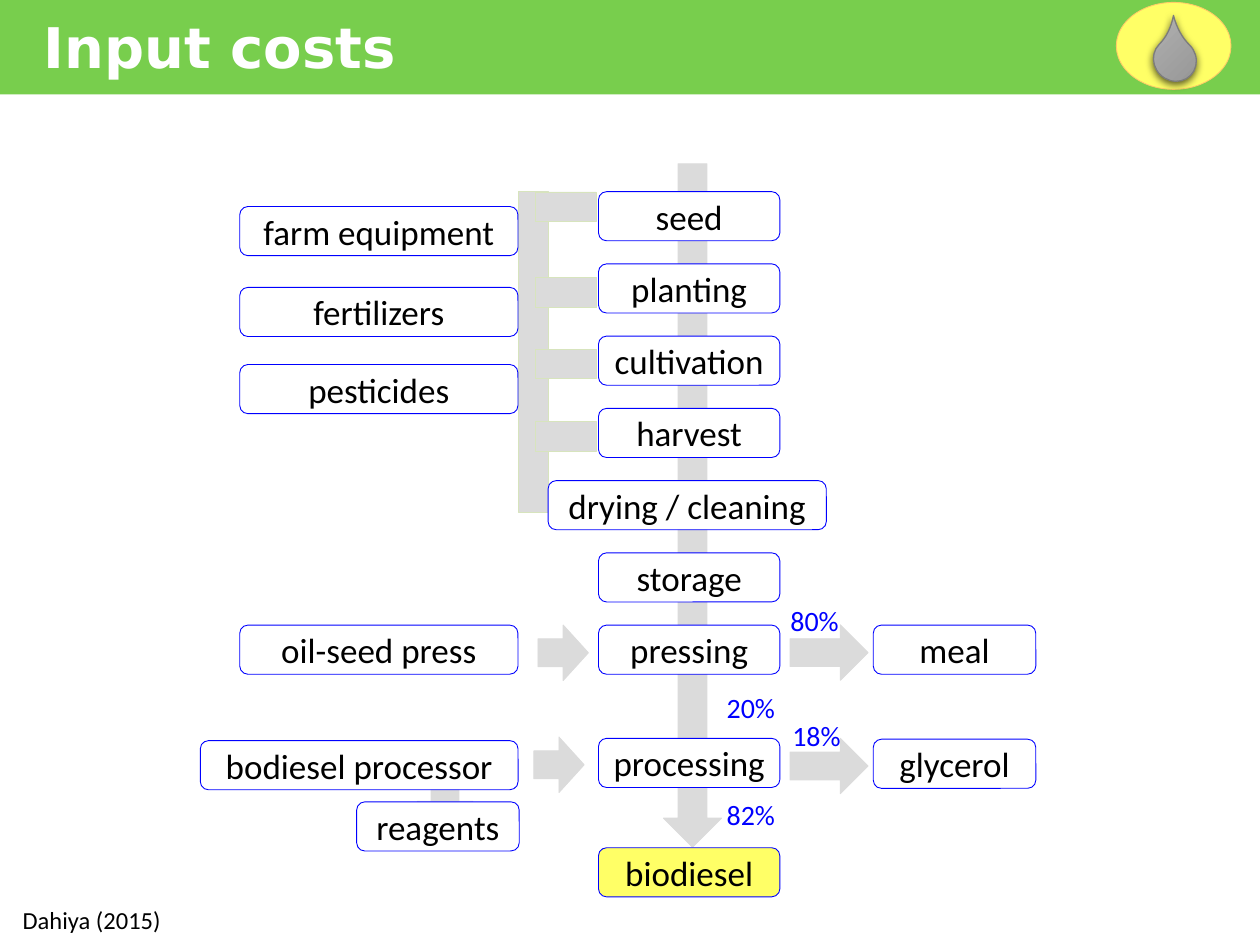
"""Build the slide on the input costs of biodiesel production."""
from lxml import etree
from pptx import Presentation
from pptx import util as u
from pptx.dml.color import RGBColor
from pptx.enum import shapes, text
from pptx.oxml import ns

GREEN = RGBColor(0x78, 0xCE, 0x4D)
YELLOW = RGBColor(0xFF, 0xFF, 0x66)
ORANGE = RGBColor(0xFF, 0xCC, 0x66)
GREY = RGBColor(0xDB, 0xDB, 0xDB)
PALE_GREEN = RGBColor(0xD7, 0xE4, 0xBD)
DROP_LIGHT = RGBColor(0xAF, 0xAF, 0xAF)
DROP_DARK = RGBColor(0x93, 0x93, 0x93)
DROP_EDGE = RGBColor(0x7C, 0x7C, 0x7C)
BLUE = RGBColor(0x00, 0x00, 0xFF)
BLACK = RGBColor(0x00, 0x00, 0x00)
WHITE = RGBColor(0xFF, 0xFF, 0xFF)

KIND = shapes.MSO_SHAPE
BOX_HEIGHT = 28.1
STAGE_LEFT, STAGE_WIDTH = 342, 103.7
STAGE_TOP, STAGE_STEP = 109.5, 41.28
INPUT_LEFT, INPUT_WIDTH = 137, 159
OUTPUT_LEFT, OUTPUT_WIDTH = 499, 92.9


class FlowSlide:
    """Hold the style and the slide, and add each kind of element."""

    def __init__(self, slide, font="Calibri"):
        self.slide = slide
        self.font = font

    def shape(self, kind, left, top, width, height, fill=None, line=None,
              rotation=0, parent=None):
        parent = parent or self.slide
        shape = parent.shapes.add_shape(
            kind, u.Pt(left), u.Pt(top), u.Pt(width), u.Pt(height))
        shape.shadow.inherit = False
        shape.rotation = rotation
        if fill is None:
            shape.fill.background()
        else:
            shape.fill.solid()
            shape.fill.fore_color.rgb = fill
        if line is None:
            shape.line.fill.background()
        else:
            shape.line.color.rgb = line
            shape.line.width = u.Pt(0.5)
        return shape

    def text_run(self, paragraph, words, size, color, font=None, bold=False):
        run = paragraph.add_run()
        run.text = words
        run.font.name = font or self.font
        run.font.size = u.Pt(size)
        run.font.bold = bold
        run.font.color.rgb = color

    def box(self, words, left, top, width, fill=None):
        shape = self.shape(KIND.ROUNDED_RECTANGLE, left, top, width,
                           BOX_HEIGHT, fill, BLUE)
        frame = shape.text_frame
        frame.vertical_anchor = text.MSO_ANCHOR.MIDDLE
        paragraph = frame.paragraphs[0]
        paragraph.alignment = text.PP_ALIGN.CENTER
        self.text_run(paragraph, words, 20, BLACK)

    def label(self, words, left, top, width, height, size, color,
              font=None, bold=False):
        shape = self.slide.shapes.add_textbox(
            u.Pt(left), u.Pt(top), u.Pt(width), u.Pt(height))
        frame = shape.text_frame
        frame.word_wrap = False
        frame.auto_size = text.MSO_AUTO_SIZE.SHAPE_TO_FIT_TEXT
        self.text_run(frame.paragraphs[0], words, size, color, font, bold)

    def arrow(self, left, top, width, height, rotation=0):
        self.shape(KIND.DOWN_ARROW, left, top, width, height, GREY, GREY,
                   rotation)

    def bar(self, left, top, width, height, rotation=0):
        self.shape(KIND.RECTANGLE, left, top, width, height, GREY,
                   PALE_GREEN, rotation)

    def drop_icon(self):
        group = self.slide.shapes.add_group_shape()
        self.shape(KIND.OVAL, 637.9, 1.4, 65.5, 49.7, YELLOW, ORANGE,
                   parent=group)
        drop = self.shape(KIND.TEAR, 659.5, 21.6, 23.8, 25.2, GREY,
                          DROP_EDGE, 314.8, group)
        drop.adjustments[0] = 1.465
        drop.line.width = u.Pt(0.75)
        drop.fill.gradient()
        drop.fill.gradient_angle = 270
        for stop, color in zip(drop.fill.gradient_stops,
                               (DROP_LIGHT, DROP_DARK)):
            stop.color.rgb = color
        effects = drop.element.spPr.find(ns.qn("a:effectLst"))
        shadow = etree.SubElement(
            effects, ns.qn("a:outerShdw"), blurRad=str(u.Pt(4.5)),
            dist=str(u.Pt(1.5)), dir="5400000", rotWithShape="0")
        color = etree.SubElement(shadow, ns.qn("a:srgbClr"), val="000000")
        etree.SubElement(color, ns.qn("a:alpha"), val="63000")


def main():
    presentation = Presentation()
    presentation.slide_width = u.Pt(720)
    presentation.slide_height = u.Pt(540)
    flow = FlowSlide(
        presentation.slides.add_slide(presentation.slide_layouts[6]))

    flow.bar(296.5, 109.5, 16.8, 183.6)
    flow.arrow(238.5, 443.5, 31.7, 28.8)
    flow.arrow(379.2, 93.6, 33.1, 390.5)

    flow.shape(KIND.RECTANGLE, 0, 0, 720.5, 54, GREEN)
    flow.label("Input costs", 18, 3.6, 221, 46, 32, WHITE,
               "DejaVu Sans", True)
    flow.drop_icon()
    flow.label("Dahiya (2015)", 5.8, 513.4, 94.3, 24.2, 14, BLACK)

    stages = ("seed", "planting", "cultivation", "harvest",
              "drying / cleaning", "storage", "pressing")
    for index, words in enumerate(stages):
        left, width = STAGE_LEFT, STAGE_WIDTH
        if words == "drying / cleaning":
            left, width = 313.2, INPUT_WIDTH
        flow.box(words, left, STAGE_TOP + index * STAGE_STEP, width, WHITE)
    flow.box("processing", STAGE_LEFT, 421.9, STAGE_WIDTH, WHITE)
    flow.box("biodiesel", STAGE_LEFT, 484.4, STAGE_WIDTH, YELLOW)

    for words, top in (("farm equipment", 118), ("fertilizers", 164.2),
                       ("pesticides", 208.3), ("oil-seed press", 357.2)):
        flow.box(words, INPUT_LEFT, top, INPUT_WIDTH)
    flow.box("bodiesel processor", 114.5, 423.2, 181.6, WHITE)
    flow.box("reagents", 203.8, 458.2, OUTPUT_WIDTH, WHITE)
    flow.box("meal", OUTPUT_LEFT, 357.2, OUTPUT_WIDTH)
    flow.box("glycerol", OUTPUT_LEFT, 422.4, OUTPUT_WIDTH)

    for top in (415.4, 350.6):
        flow.arrow(457.9, top, 31.7, 44.6, 270)
    for words, left, top in (("20%", 408.2, 391), ("82%", 408.2, 452.2),
                             ("80%", 444.6, 341.3), ("18%", 445.7, 406.8)):
        flow.label(words, left, top, 42.5, 26.6, 16, BLUE)
    for left, top in ((306, 358.6), (303.6, 422.6)):
        flow.arrow(left, top, 31.7, 28.8, 270)
    for top in (100.8, 149.8, 190.8, 232.2):
        flow.bar(315, top, 16.8, 34.6, 90)

    presentation.save("out.pptx")


if __name__ == "__main__":
    main()
